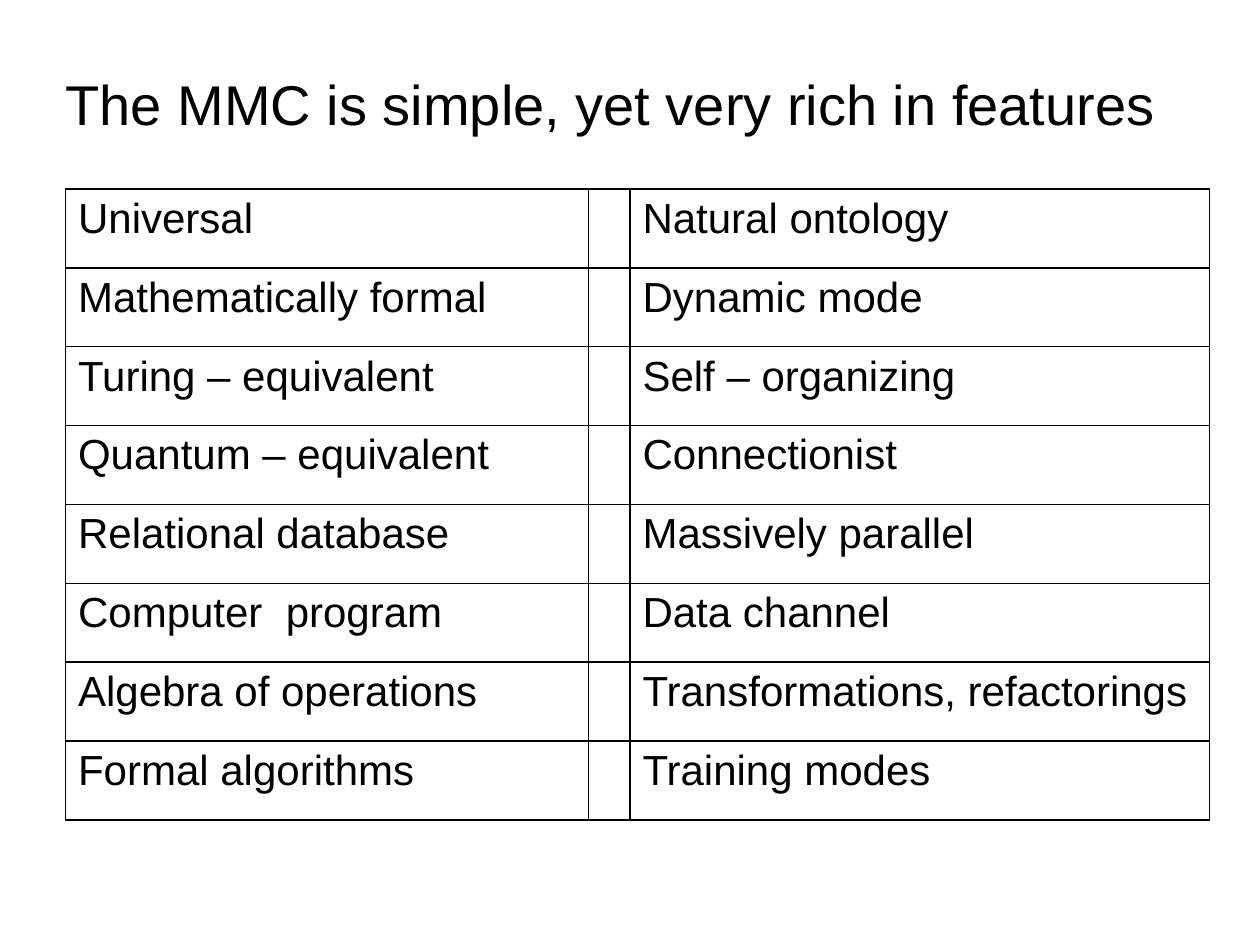
"""Build a slide listing the features of the MMC in a ruled table."""
from lxml import etree
from pptx import Presentation
from pptx.dml.color import RGBColor
from pptx.enum import text
from pptx.oxml import ns
from pptx.util import Cm, Pt

INK = "000000"
FEATURES = [
    ("Universal", "Natural ontology"),
    ("Mathematically formal", "Dynamic mode"),
    ("Turing – equivalent", "Self – organizing"),
    ("Quantum – equivalent", "Connectionist"),
    ("Relational database", "Massively parallel"),
    ("Computer  program", "Data channel"),
    ("Algebra of operations", "Transformations, refactorings"),
    ("Formal algorithms", "Training modes"),
]
COLUMN_WIDTHS = [10.54, 0.84, 11.68]
ROW_HEIGHT = 1.59


def add_span(para, words, size, color=INK):
    """Add one formatted run to a left-aligned paragraph."""
    para.alignment = text.PP_ALIGN.LEFT
    span = para.add_run()
    span.text = words
    span.font.name = "Arial"
    span.font.size = Pt(size)
    span.font.color.rgb = RGBColor.from_string(color)


def add_borders(cell, color=INK):
    """Rule all four sides of a table cell with a one-point line."""
    properties = cell._tc.get_or_add_tcPr()
    for index, side in enumerate(("lnL", "lnR", "lnT", "lnB")):
        line = etree.Element(ns.qn(f"a:{side}"), w=str(Pt(1)))
        fill = etree.SubElement(line, ns.qn("a:solidFill"))
        etree.SubElement(fill, ns.qn("a:srgbClr"), val=color)
        properties.insert(index, line)


deck = Presentation()
deck.slide_width, deck.slide_height = Cm(25.4), Cm(19.05)
page = deck.slides.add_slide(deck.slide_layouts[5])

title = page.shapes.title
title.left, title.top, title.width, title.height = Cm(1.07), Cm(1.27), Cm(24.13), Cm(1.63)
title.text_frame.word_wrap = True
title.text_frame.auto_size = text.MSO_AUTO_SIZE.SHAPE_TO_FIT_TEXT
title.text_frame.vertical_anchor = text.MSO_ANCHOR.TOP
add_span(title.text_frame.paragraphs[0], "The MMC is simple, yet very rich in features", 32)

frame = page.shapes.add_table(
    len(FEATURES), len(COLUMN_WIDTHS), Cm(1.32), Cm(3.81),
    Cm(sum(COLUMN_WIDTHS)), Cm(ROW_HEIGHT * len(FEATURES)))
table = frame.table
table.first_row = table.horz_banding = False
for column, width in zip(table.columns, COLUMN_WIDTHS):
    column.width = Cm(width)

for row, (left, right) in zip(table.rows, FEATURES):
    row.height = Cm(ROW_HEIGHT)
    for cell, words in zip(row.cells, (left, "", right)):
        cell.fill.background()
        add_borders(cell)
        if words:
            add_span(cell.text_frame.paragraphs[0], words, 24)

deck.save("out.pptx")
